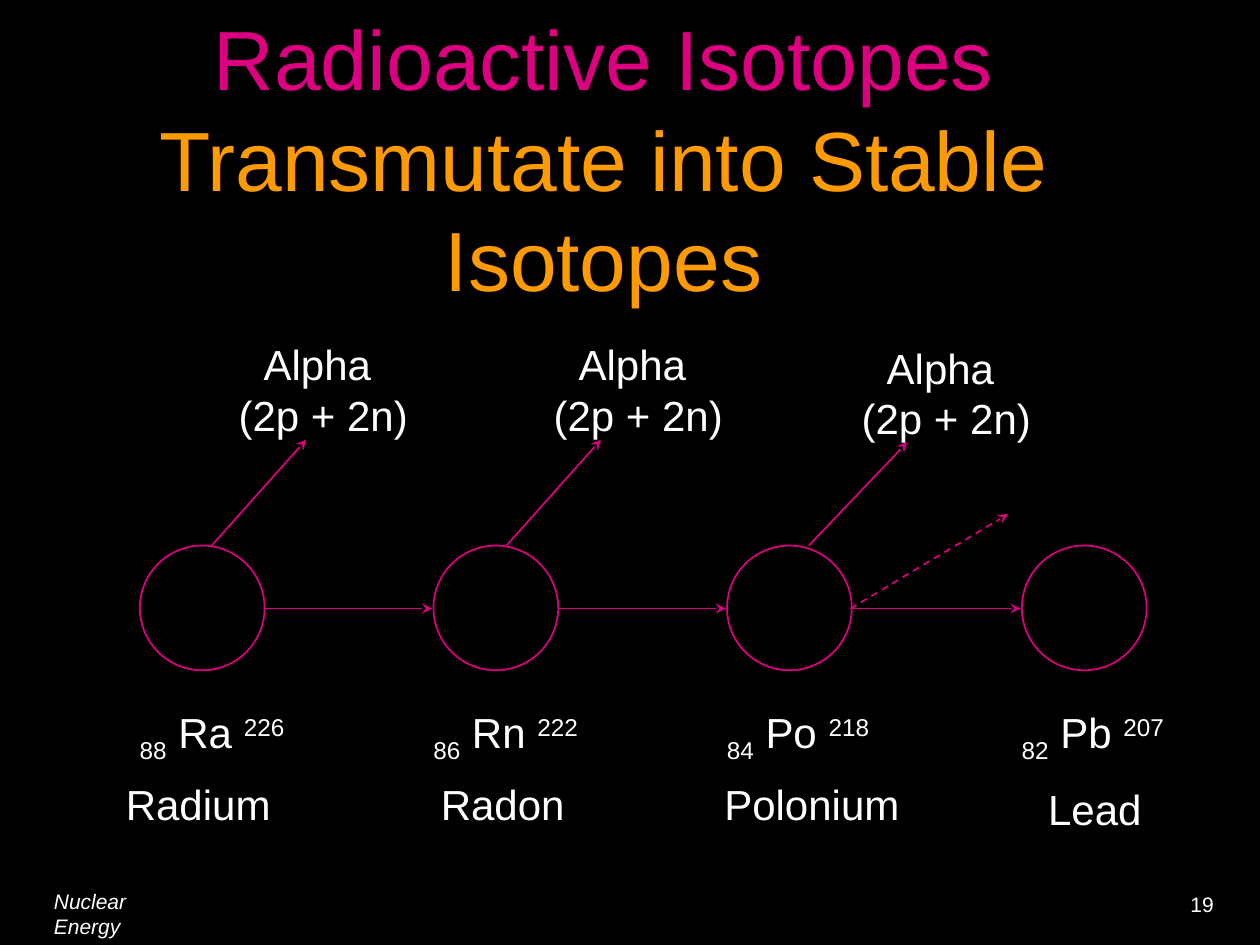
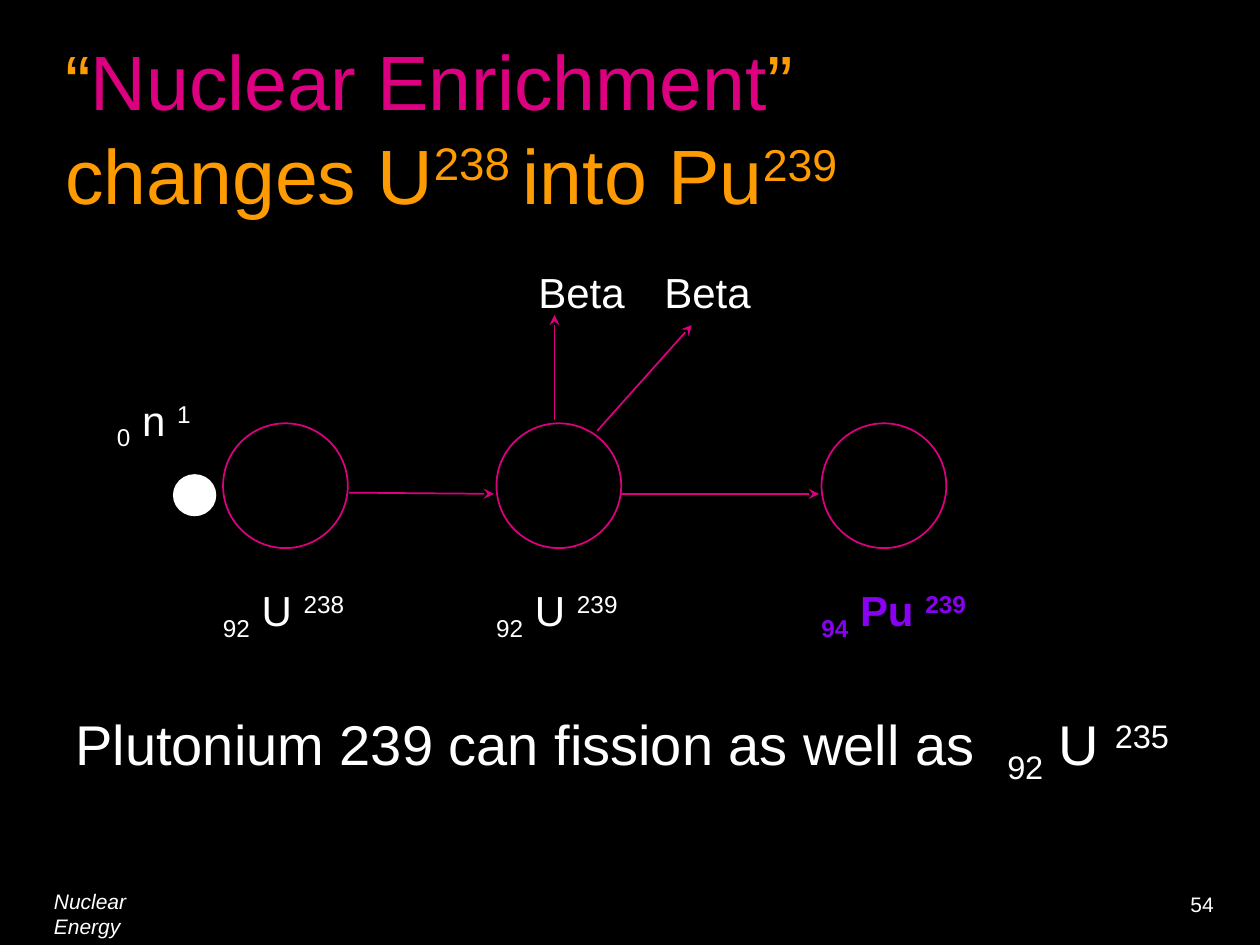
from lxml import etree
from pptx import Presentation
from pptx.dml.color import RGBColor
from pptx.enum.dml import MSO_LINE_DASH_STYLE as Dash
from pptx.enum.shapes import MSO_CONNECTOR as Connector, MSO_SHAPE as Shape
from pptx.enum.text import MSO_ANCHOR as Anchor, MSO_AUTO_SIZE as AutoSize, PP_ALIGN as Align
from pptx.oxml.ns import qn
from pptx.util import Inches, Pt

FONT = "Arial"
COLORS = {
    "background": "000000",
    "text": "FFFFFF",
    "magenta": "DC0081",
    "orange": "FE9B03",
    "violet": "8901F3",
}
ATOM_SIZE = 0.99


def color(name):
    return RGBColor.from_string(COLORS[name])


def add_run(paragraph, text, size=24, fill="text", bold=False, italic=False, baseline=0):
    """Add one run; baseline is a percentage, negative for a subscript."""
    run = paragraph.add_run()
    run.text = text
    font = run.font
    font.name, font.size = FONT, Pt(size)
    font.bold, font.italic = bold, italic
    font.color.rgb = color(fill)
    if baseline:
        run._r.get_or_add_rPr().set("baseline", str(baseline * 1000))


def add_text(slide, box, paragraphs, align=Align.LEFT, anchor=Anchor.TOP,
             wrap=False, grow=True, **font):
    """Add a text box; each paragraph is a string or a list of (text, format) runs."""
    frame = slide.shapes.add_textbox(*map(Inches, box)).text_frame
    frame.word_wrap = wrap
    frame.vertical_anchor = anchor
    frame.auto_size = AutoSize.SHAPE_TO_FIT_TEXT if grow else AutoSize.NONE
    for index, content in enumerate(paragraphs):
        paragraph = frame.add_paragraph() if index else frame.paragraphs[0]
        paragraph.alignment = align
        runs = [(content, {})] if isinstance(content, str) else content
        for text, overrides in runs:
            add_run(paragraph, text, **{**font, **overrides})


def nuclide_runs(number, symbol, mass):
    return [(number, {"baseline": -25}), (f" {symbol} ", {}), (mass, {"baseline": 30})]


def add_title(slide, box, runs, **text_format):
    add_text(slide, box, [runs], anchor=Anchor.MIDDLE, wrap=True, grow=False,
             **{"fill": "orange", **text_format})


def add_circle(slide, left, top, width, height, line="magenta", fill=None):
    circle = slide.shapes.add_shape(Shape.OVAL, *map(Inches, (left, top, width, height)))
    circle.shadow.inherit = False
    if fill:
        circle.fill.solid()
        circle.fill.fore_color.rgb = color(fill)
    else:
        circle.fill.background()
    circle.line.color.rgb = color(line)
    circle.line.width = Pt(1)


def add_atom(slide, left, top, nuclide, label_width, **font):
    """Draw a nucleus with its nuclide notation below."""
    add_circle(slide, left, top, ATOM_SIZE, ATOM_SIZE)
    add_text(slide, (left - 0.1, top + 1.23, label_width, 0.5),
             [nuclide_runs(*nuclide)], **font)


def add_arrow(slide, start, end, dashed=False):
    arrow = slide.shapes.add_connector(Connector.STRAIGHT, *map(Inches, start + end))
    arrow.line.color.rgb = color("magenta")
    arrow.line.width = Pt(1)
    if dashed:
        arrow.line.dash_style = Dash.DASH
    etree.SubElement(arrow.line._get_or_add_ln(), qn("a:tailEnd"), type="stealth")
    etree.SubElement(arrow._element.spPr, qn("a:effectLst"))


def add_slide(presentation, number):
    slide = presentation.slides.add_slide(presentation.slide_layouts[6])
    slide.background.fill.solid()
    slide.background.fill.fore_color.rgb = color("background")
    add_text(slide, (9.35, 7.03, 0.4, 0.3), [number], size=12)
    add_text(slide, (0.33, 7, 1.2, 0.3), ["Nuclear Energy"], size=12, italic=True, wrap=True)
    return slide


def build_decay_slide(presentation):
    slide = add_slide(presentation, "19")
    add_title(slide, (0.5, 0.25, 8.58, 2),
              [("Radioactive Isotopes", {"fill": "magenta"}),
               (" Transmutate into Stable Isotopes", {})],
              size=48, align=Align.CENTER)

    top, middle = 4.33, 4.83
    atoms = [
        (1.11, ("88", "Ra", "226"), 1.62),
        (3.44, ("86", "Rn", "222"), 1.62),
        (5.77, ("84", "Po", "218"), 1.6),
        (8.11, ("82", "Pb", "207"), 1.41),
    ]
    for left, nuclide, label_width in atoms:
        add_atom(slide, left, top, nuclide, label_width)
    for (left, *_), (next_left, *_) in zip(atoms, atoms[1:]):
        add_arrow(slide, (left + ATOM_SIZE, middle), (next_left - 0.01, middle))
    add_arrow(slide, (6.75, middle), (8, 4.08), dashed=True)

    names = [
        ("Radium", 0.9, 6.13, 1.35),
        ("Radon", 3.4, 6.13, 1.19),
        ("Polonium", 5.65, 6.13, 1.59),
        ("Lead", 8.22, 6.17, 0.94),
    ]
    for name, left, name_top, width in names:
        add_text(slide, (left, name_top, width, 0.5), [name])

    emissions = [
        ((1.68, top), (2.43, 3.49), (1.79, 2.64, 1.55, 0.9)),
        ((4.02, top), (4.77, 3.49), (4.29, 2.64, 1.55, 0.9)),
        ((6.42, top), (7.2, 3.51), (6.7, 2.67, 1.62, 0.9)),
    ]
    for start, end, box in emissions:
        add_arrow(slide, start, end)
        add_text(slide, box, ["Alpha ", "(2p + 2n)"], align=Align.CENTER)


def build_enrichment_slide(presentation):
    slide = add_slide(presentation, "54")
    add_title(slide, (0.42, 0.17, 8.4, 1.67),
              [("“", {}),
               ("Nuclear Enrichment", {"fill": "magenta"}),
               ("” changes U", {}),
               ("238 ", {"size": 45, "baseline": 30}),
               ("into Pu", {}),
               ("239", {"baseline": 30})],
              size=44)

    top = 3.36
    add_atom(slide, 1.77, top, ("92", "U", "238"), 1.24)
    add_atom(slide, 3.94, top, ("92", "U", "239"), 1.24)
    add_atom(slide, 6.52, top, ("94", "Pu", "239"), 1.43, fill="violet", bold=True)
    add_arrow(slide, (2.77, 3.91), (3.92, 3.92))
    add_arrow(slide, (4.92, 3.92), (6.5, 3.92))

    add_circle(slide, 1.38, 3.77, 0.33, 0.32, line="text", fill="text")
    add_text(slide, (0.83, 3.08, 0.82, 0.5), [nuclide_runs("0", "n", "1")])

    emissions = [
        ((4.4, 3.33), (4.4, 2.5), 4.17),
        ((4.74, 3.42), (5.49, 2.58), 5.17),
    ]
    for start, end, label_left in emissions:
        add_arrow(slide, start, end)
        add_text(slide, (label_left, 2.07, 0.89, 0.5), ["Beta"], align=Align.CENTER)

    add_text(slide, (0.5, 5.58, 9.08, 0.63),
             [[("Plutonium 239 can fission as well as  ", {}),
               *nuclide_runs("92", "U", "235")]],
             size=32, wrap=True)


def main():
    presentation = Presentation()
    presentation.slide_width, presentation.slide_height = Inches(10), Inches(7.5)
    build_decay_slide(presentation)
    build_enrichment_slide(presentation)
    presentation.save("out.pptx")


if __name__ == "__main__":
    main()
